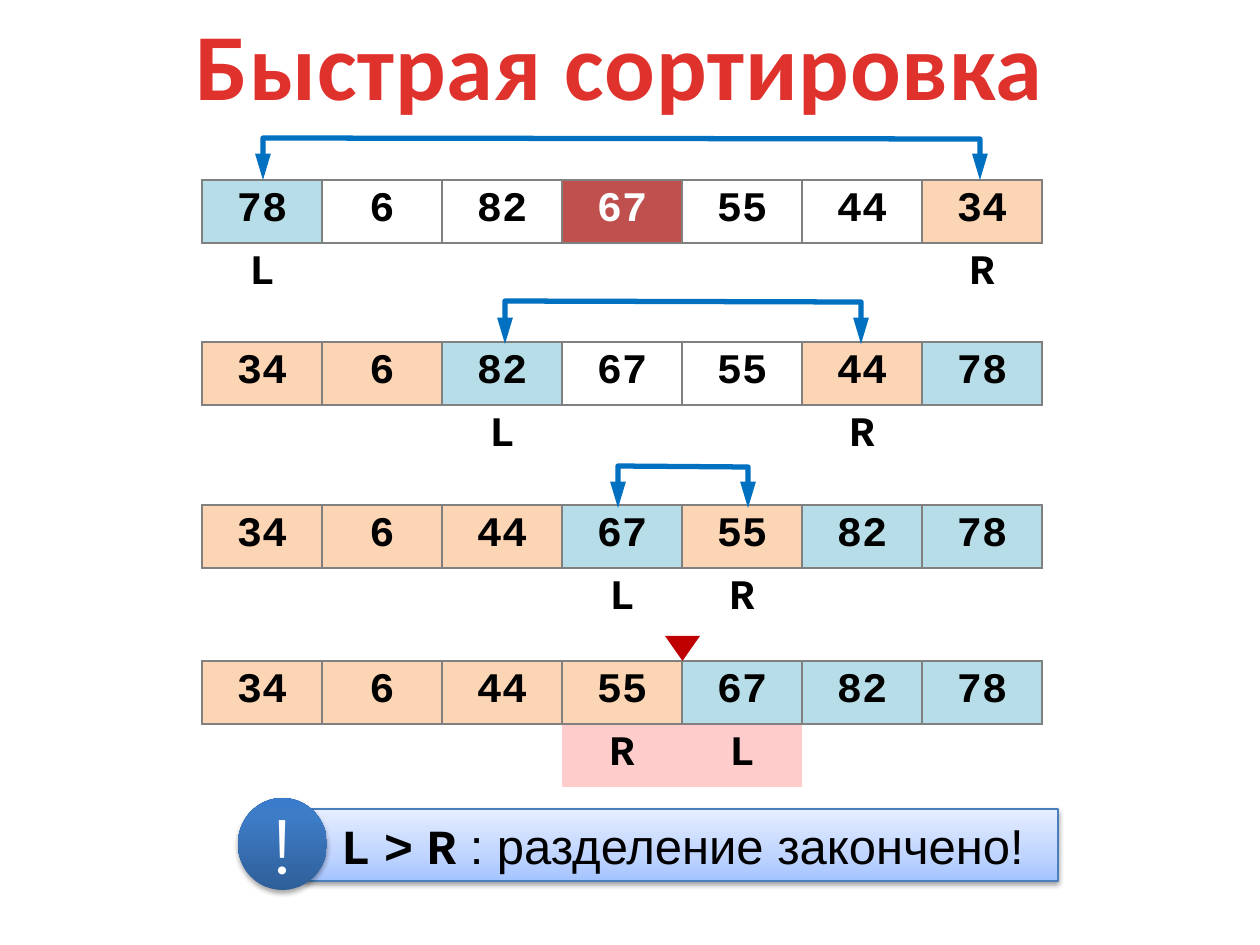
import copy
import pptx
import pptx.util
import pptx.dml.color
import pptx.enum.shapes
import pptx.enum.text
import pptx.oxml
import pptx.oxml.ns
from lxml import etree

RGB = pptx.dml.color.RGBColor
SHAPE = pptx.enum.shapes.MSO_SHAPE
ANCHOR = pptx.enum.text.MSO_ANCHOR
ALIGN = pptx.enum.text.PP_ALIGN
qn = pptx.oxml.ns.qn

SCALE = 914400 / 126
BLACK = RGB(0x00, 0x00, 0x00)
WHITE = RGB(0xFF, 0xFF, 0xFF)
TITLE_RED = RGB(0xE0, 0x32, 0x2D)
ARROW_BLUE = RGB(0x00, 0x70, 0xC0)
MARKER_RED = RGB(0xC0, 0x00, 0x00)
NOTE_LINE = RGB(0x4B, 0x7E, 0xBC)
GRID_GREY = "808080"
CELL_FILLS = {
    "b": RGB(0xB7, 0xDE, 0xE8),
    "o": RGB(0xFC, 0xD5, 0xB5),
    "r": RGB(0xC0, 0x50, 0x4D),
    "p": RGB(0xFF, 0xCC, 0xCC),
}
NOTE_STOPS = [(0, RGB(0xA4, 0xC4, 0xFF)), (0.35, RGB(0xBF, 0xD4, 0xFF)),
              (1, RGB(0xE6, 0xEE, 0xFF))]
BADGE_STOPS = [(0, RGB(0x2F, 0x5F, 0x99)), (0.8, RGB(0x3D, 0x7C, 0xC7)),
               (1, RGB(0x3A, 0x7C, 0xCB))]
CODE = {"name": "Courier New", "bold": True}
PLAIN = {"name": "Arial", "bold": False}
NOTE_SPANS = [("L", CODE), (" ", PLAIN), (">", CODE), (" ", PLAIN), ("R", CODE),
              (" : разделение закончено!", PLAIN)]

GRID_LEFT, COLUMN, ROW = 202, 120, 63
STEPS = [
    (180, "78 6 82 67 55 44 34", "b--r--o", {0: "L", 6: "R"}, "-------"),
    (342, "34 6 82 67 55 44 78", "oob--ob", {2: "L", 5: "R"}, "-------"),
    (505, "34 6 44 67 55 82 78", "ooobobb", {3: "L", 4: "R"}, "-------"),
    (661, "34 6 44 55 67 82 78", "oooobbb", {3: "R", 4: "L"}, "---pp--"),
]
SWAPS = [(263, 980, 138, 180), (505, 861, 301, 344), (618, 748, 466, 508)]


def px(length):
    return pptx.util.Emu(round(length * SCALE))


def add_span(para, text, **values):
    span = para.add_run()
    span.text = text
    color = values.pop("color", BLACK)
    for name, value in values.items():
        setattr(span.font, name, value)
    span.font.color.rgb = color
    return span


def set_frame(frame, **values):
    for name, value in values.items():
        setattr(frame, name, value)


def set_borders(cell, visible):
    properties = cell._tc.get_or_add_tcPr()
    for index, side in enumerate("LRTB"):
        line = etree.Element(qn("a:ln" + side), w="12700")
        if side in visible:
            fill = etree.SubElement(line, qn("a:solidFill"))
            etree.SubElement(fill, qn("a:srgbClr"), val=GRID_GREY)
        else:
            etree.SubElement(line, qn("a:noFill"))
        properties.insert(index, line)


def fill_cell(cell, text, fill, borders):
    if fill in CELL_FILLS:
        cell.fill.solid()
        cell.fill.fore_color.rgb = CELL_FILLS[fill]
    else:
        cell.fill.background()
    set_borders(cell, borders)
    para = cell.text_frame.paragraphs[0]
    para.alignment = ALIGN.CENTER
    if text:
        add_span(para, text, size=pptx.util.Pt(24),
                 color=WHITE if fill == "r" else BLACK, **CODE)


def add_step(page, top, numbers, fills, pointers, pointer_fills):
    values = numbers.split()
    count = len(values)
    table = page.shapes.add_table(2, count, px(GRID_LEFT), px(top),
                                  px(COLUMN * count), px(ROW * 2)).table
    table.first_row = False
    table.horz_banding = False
    for row in table.rows:
        row.height = px(ROW)
    for index, value in enumerate(values):
        table.columns[index].width = px(COLUMN)
        fill_cell(table.cell(0, index), value, fills[index], "LRTB")
        fill_cell(table.cell(1, index), pointers.get(index), pointer_fills[index], "T")


def add_swap(page, left, right, top, bottom):
    builder = page.shapes.build_freeform(left, bottom, scale=SCALE)
    builder.add_line_segments([(left, top), (right, top + 1), (right, bottom)],
                              close=False)
    bracket = builder.convert_to_shape()
    bracket.shadow.inherit = False
    bracket.fill.background()
    bracket.line.color.rgb = ARROW_BLUE
    bracket.line.width = pptx.util.Pt(3)
    line = bracket.line._get_or_add_ln()
    for end in ("a:headEnd", "a:tailEnd"):
        etree.SubElement(line, qn(end), type="triangle", len="lg")


def add_marker(page):
    marker = page.shapes.add_shape(SHAPE.ISOSCELES_TRIANGLE,
                                   px(665), px(636), px(35), px(25))
    marker.shadow.inherit = False
    marker._element.spPr.get_or_add_xfrm().set("flipV", "1")
    marker.fill.solid()
    marker.fill.fore_color.rgb = MARKER_RED
    marker.line.fill.background()


def add_shadow(box, opacity, distance):
    box.shadow.inherit = False
    effects = box._element.spPr.find(qn("a:effectLst"))
    shadow = etree.SubElement(effects, qn("a:outerShdw"), blurRad="39370",
                              dist=str(round(distance * 12700)), dir="5400000",
                              rotWithShape="0")
    color = etree.SubElement(shadow, qn("a:srgbClr"), val="000000")
    etree.SubElement(color, qn("a:alpha"), val=str(opacity * 1000))


def set_gradient(box, stops):
    box.fill.gradient()
    box.fill.gradient_angle = 90
    stop_list = box._element.spPr.find(".//" + qn("a:gsLst"))
    while len(stop_list) < len(stops):
        stop_list.append(copy.deepcopy(stop_list[0]))
    for stop, (position, color) in zip(box.fill.gradient_stops, stops):
        stop.position = position
        stop.color.rgb = color


def add_note(page):
    group = page.shapes.add_group_shape()
    box = group.shapes.add_shape(SHAPE.RECTANGLE, px(305), px(809), px(753), px(72))
    set_gradient(box, NOTE_STOPS)
    box.line.color.rgb = NOTE_LINE
    box.line.width = pptx.util.Pt(0.75)
    add_shadow(box, 38, 1.6)
    set_frame(box.text_frame, word_wrap=True, margin_left=px(36),
              vertical_anchor=ANCHOR.MIDDLE)
    para = box.text_frame.paragraphs[0]
    para.alignment = ALIGN.LEFT
    for text, style in NOTE_SPANS:
        add_span(para, text, size=pptx.util.Pt(28), **style)

    badge = group.shapes.add_shape(SHAPE.OVAL, px(238), px(798), px(89), px(92))
    set_gradient(badge, BADGE_STOPS)
    badge.line.fill.background()
    add_shadow(badge, 35, 1.8)
    set_frame(badge.text_frame, word_wrap=False, vertical_anchor=ANCHOR.MIDDLE)
    para = badge.text_frame.paragraphs[0]
    para.alignment = ALIGN.CENTER
    add_span(para, "!", size=pptx.util.Pt(44), name="Montserrat", color=WHITE)


def set_title(page):
    title = page.shapes.title
    place = {"left": 0, "top": 19, "width": 1240, "height": 87}
    for name, value in place.items():
        setattr(title, name, px(value))
    set_frame(title.text_frame, word_wrap=True, vertical_anchor=ANCHOR.MIDDLE,
              auto_size=pptx.enum.text.MSO_AUTO_SIZE.NONE)
    para = title.text_frame.paragraphs[0]
    para.alignment = ALIGN.CENTER
    span = add_span(para, "Быстрая сортировка", size=pptx.util.Pt(54),
                    name="Calibri", bold=True, color=TITLE_RED)
    span._r.get_or_add_rPr().set("spc", "50")


def main():
    deck = pptx.Presentation()
    deck.slide_width, deck.slide_height = px(1260), px(945)
    page = deck.slides.add_slide(deck.slide_layouts[5])
    set_title(page)
    for step in STEPS:
        add_step(page, *step)
    for swap in SWAPS:
        add_swap(page, *swap)
    add_marker(page)
    add_note(page)
    deck.save("out.pptx")


if __name__ == "__main__":
    main()
